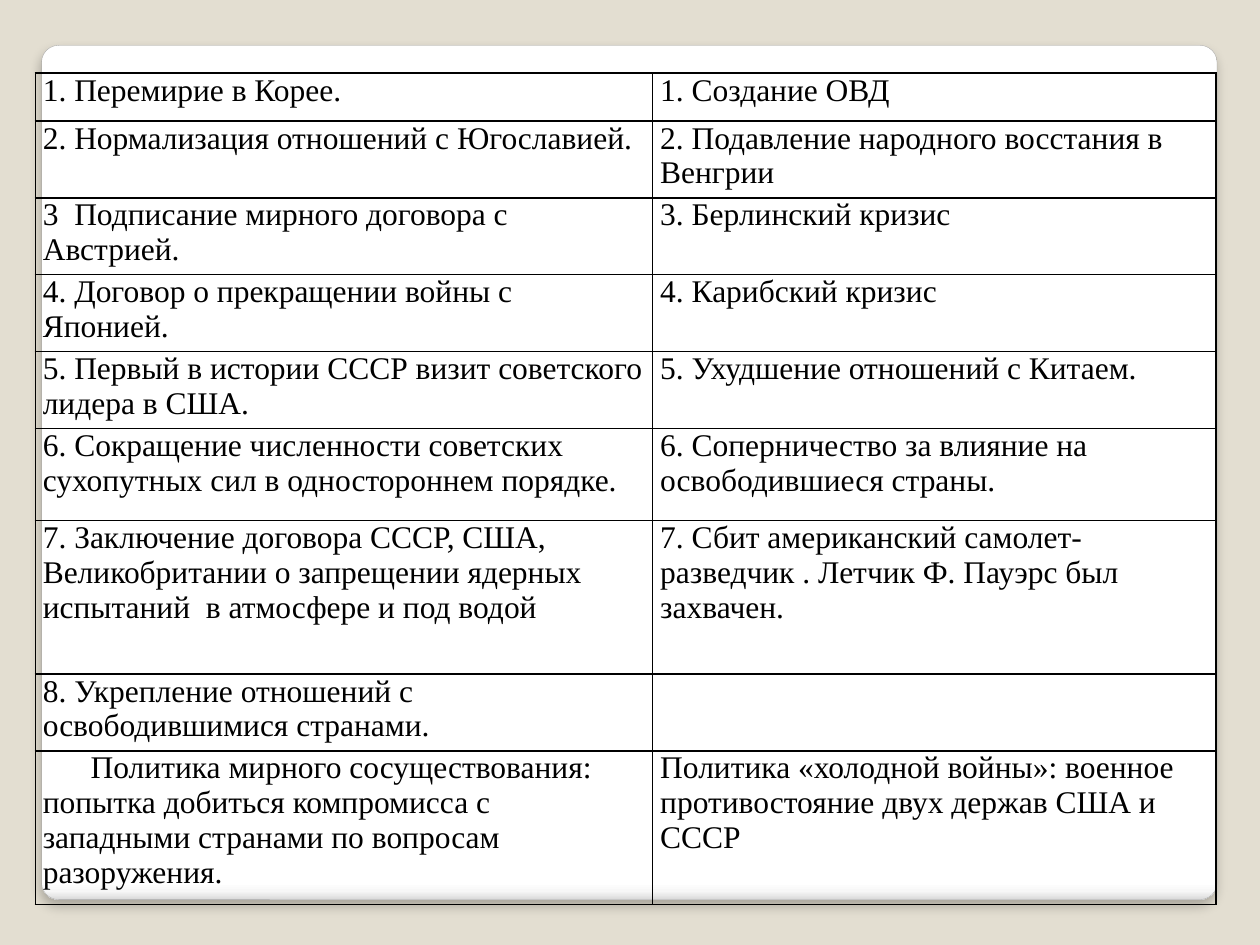
from dataclasses import dataclass
from lxml.etree import SubElement
from pptx import Presentation
from pptx.dml.color import RGBColor
from pptx.enum.shapes import MSO_SHAPE
from pptx.enum.text import PP_ALIGN
from pptx.oxml import parse_xml
from pptx.oxml.ns import nsdecls, qn
from pptx.util import Inches, Pt


@dataclass
class Theme:
    back: str = "E3DED1"
    edge: str = "A4A4A4"
    ink: str = "000000"
    font: str = "Times New Roman"
    size: int = 18
    fade: tuple = ((0, "FFFFFF"), (98, "FFFFFF"), (99, "F7F7F7"), (100, "DADADA"))


theme = Theme()


def write(frame, text, *, size=theme.size, color=theme.ink, indent=0):
    frame.word_wrap = True
    para = frame.paragraphs[0]
    para.text = text
    para.alignment = PP_ALIGN.LEFT
    para.font.size = Pt(size)
    para.font.name = theme.font
    para.font.color.rgb = RGBColor.from_string(color)
    if indent:
        props = para._p.get_or_add_pPr()
        props.set("marL", "0")
        props.set("indent", str(Inches(indent)))


def border(cell, width=1):
    props = cell._tc.get_or_add_tcPr()
    for spot, side in enumerate("LRTB"):
        props.insert(spot, parse_xml(
            f'<a:ln{side} {nsdecls("a")} w="{Pt(width)}"><a:solidFill>'
            f'<a:srgbClr val="{theme.ink}"/></a:solidFill></a:ln{side}>'))


deck = Presentation()
deck.slide_width = Inches(10)
deck.slide_height = Inches(7.5)
slide = deck.slides.add_slide(deck.slide_layouts[6])
slide.background.fill.solid()
slide.background.fill.fore_color.rgb = RGBColor.from_string(theme.back)

panel = slide.shapes.add_shape(
    MSO_SHAPE.ROUNDED_RECTANGLE, Inches(0.33), Inches(0.36), Inches(9.33), Inches(6.78))
panel.adjustments[0] = 0.02
panel.fill.gradient()
panel.fill.gradient_angle = 270
stops = panel._element.spPr.find(".//" + qn("a:gsLst"))
for stop in list(stops):
    stops.remove(stop)
for place, tone in theme.fade:
    stop = SubElement(stops, qn("a:gs"), pos=str(place * 1000))
    SubElement(stop, qn("a:srgbClr"), val=tone)
panel.line.color.rgb = RGBColor.from_string(theme.edge)
panel.line.width = Pt(0.16)
panel.shadow.inherit = False
glow = panel._element.spPr.find(qn("a:effectLst"))
glow.append(parse_xml(
    f'<a:outerShdw {nsdecls("a")} blurRad="{Pt(6)}" dist="{Pt(4)}" dir="5400000" '
    f'algn="tl" rotWithShape="0"><a:srgbClr val="{theme.ink}">'
    '<a:alpha val="25000"/></a:srgbClr></a:outerShdw>'))

rows = [
    (0.38, "1. Перемирие в Корее.", "1. Создание ОВД"),
    (0.61, "2. Нормализация отношений с Югославией.",
     "2. Подавление народного восстания в Венгрии"),
    (0.61, "3  Подписание мирного договора с Австрией.", "3. Берлинский кризис"),
    (0.61, "4. Договор о прекращении войны с Японией.", "4. Карибский кризис"),
    (0.61, "5. Первый в истории СССР визит советского лидера в США.",
     "5. Ухудшение отношений с Китаем."),
    (0.73, "6. Сокращение численности советских сухопутных сил в одностороннем порядке.",
     "6. Соперничество за влияние на освободившиеся страны."),
    (1.22, "7. Заключение договора СССР, США, Великобритании о запрещении ядерных "
     "испытаний  в атмосфере и под водой",
     "7. Сбит американский самолет-разведчик . Летчик Ф. Пауэрс был захвачен."),
    (0.61, "8. Укрепление отношений с освободившимися странами.", ""),
    (1.22, "Политика мирного сосуществования: попытка добиться компромисса с "
     "западными странами по вопросам разоружения.",
     "Политика «холодной войны»: военное противостояние двух держав США и СССР"),
]
widths = (4.9, 4.47)
table = slide.shapes.add_table(
    len(rows), len(widths), Inches(0.28), Inches(0.58),
    Inches(sum(widths)), Inches(sum(row[0] for row in rows))).table
table.first_row = False
table.horz_banding = False
for col, width in zip(table.columns, widths):
    col.width = Inches(width)

for r, (height, *texts) in enumerate(rows):
    table.rows[r].height = Inches(height)
    for c, text in enumerate(texts):
        cell = table.cell(r, c)
        cell.margin_left = cell.margin_right = Inches(0.06)
        cell.margin_top = cell.margin_bottom = 0
        cell.fill.background()
        border(cell)
        last = r == len(rows) - 1 and c == 0
        write(cell.text_frame, text, indent=0.38 if last else 0)

deck.save("out.pptx")
